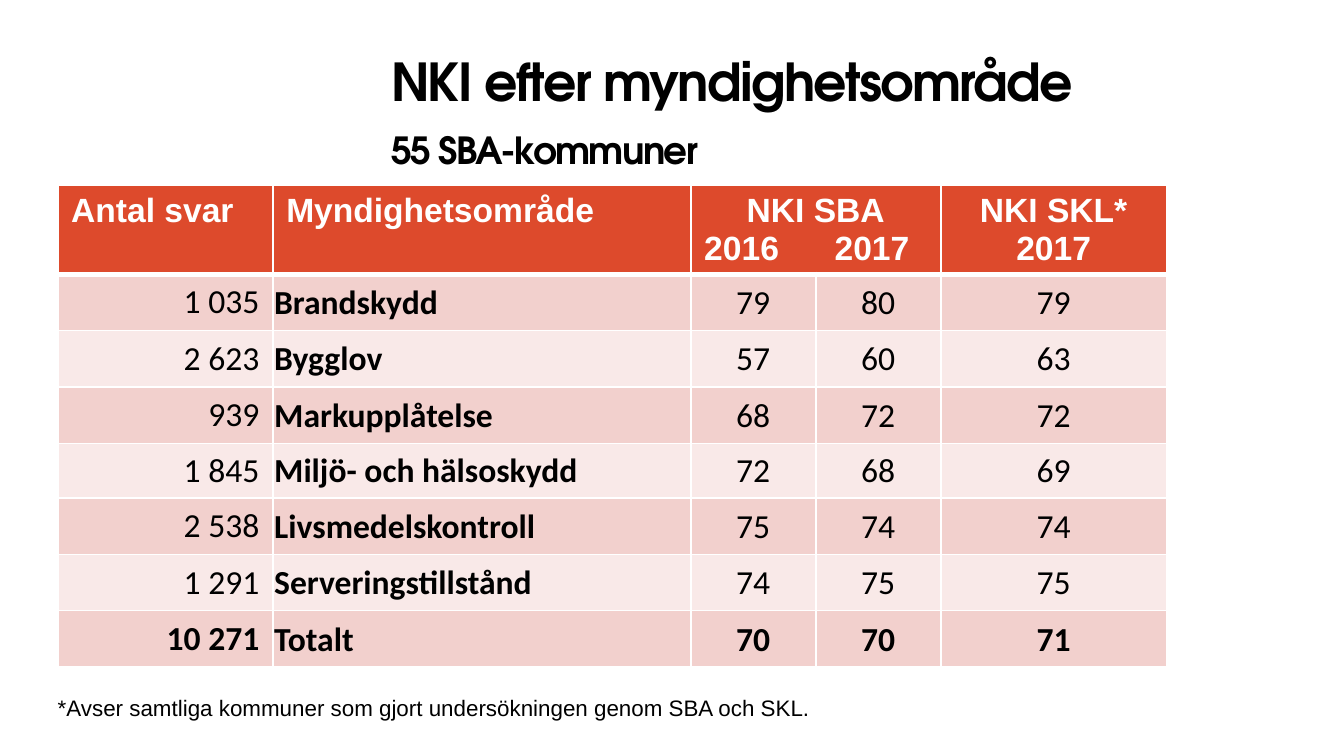
from lxml import etree
from pptx import Presentation
from pptx.dml.color import RGBColor
from pptx.enum.text import MSO_ANCHOR, MSO_AUTO_SIZE, PP_ALIGN
from pptx.oxml.ns import qn
from pptx.util import Inches, Pt

LEFT, CENTER, RIGHT = PP_ALIGN.LEFT, PP_ALIGN.CENTER, PP_ALIGN.RIGHT
TOP, MIDDLE = MSO_ANCHOR.TOP, MSO_ANCHOR.MIDDLE
BLACK, WHITE = "000000", "FFFFFF"
HEADER_FILL, BAND_FILLS = "DD4A2C", ("F2D0CD", "F9E9E8")

# Content
TITLE = "NKI efter myndighetsområde"
SUBTITLE = "55 SBA-kommuner"
FOOTNOTE = "*Avser samtliga kommuner som gjort undersökningen genom SBA och SKL."
# Each heading: column, paragraphs with their alignment
HEADINGS = [
    (0, [("Antal svar", LEFT)]),
    (1, [("Myndighetsområde", LEFT)]),
    (2, [("NKI SBA", CENTER), ("2016\t2017", LEFT)]),
    (4, [("NKI SKL* 2017", CENTER)]),
]
ROWS = [
    ("1 035", "Brandskydd", "79", "80", "79"),
    ("2 623", "Bygglov", "57", "60", "63"),
    ("939", "Markupplåtelse", "68", "72", "72"),
    ("1 845", "Miljö- och hälsoskydd", "72", "68", "69"),
    ("2 538", "Livsmedelskontroll", "75", "74", "74"),
    ("1 291", "Serveringstillstånd", "74", "75", "75"),
    ("10 271", "Totalt", "70", "70", "71"),
]
SLIDE_WIDTH = 10
COLUMN_WIDTHS = [1.6, 3.11, 0.93, 0.93, 1.68]
ROW_HEIGHTS = [0.64, 0.42, 0.42, 0.42, 0.38, 0.42, 0.42, 0.42]
TABLE_HEIGHT = 3.65
COLUMN_ALIGNMENTS = [RIGHT, LEFT, CENTER, CENTER, CENTER]
NAME_COLUMN = 1
YEAR_TAB = 0.97


def color(value):
    return RGBColor.from_string(value)


def write(paragraph, text, size=18, font="Arial", fill=BLACK, bold=False,
          align=LEFT, line_spacing=None, tracking=None):
    paragraph.alignment = align
    if line_spacing:
        paragraph.line_spacing = Pt(line_spacing)
    run = paragraph.add_run()
    run.text = text
    run.font.size = Pt(size)
    run.font.name = font
    run.font.bold = bold
    run.font.color.rgb = color(fill)
    if tracking:
        run.font._element.set("spc", str(round(tracking * 100)))


def clear_margins(frame):
    frame.margin_left = frame.margin_top = 0
    frame.margin_right = frame.margin_bottom = 0


def add_tab_stop(paragraph, position):
    properties = paragraph._p.get_or_add_pPr()
    tabs = etree.SubElement(properties, qn("a:tabLst"))
    etree.SubElement(tabs, qn("a:tab"), pos=str(Inches(position)), algn="l")


def style_cell(cell, fill, top=1, bottom=1):
    cell.fill.solid()
    cell.fill.fore_color.rgb = color(fill)
    properties = cell._tc.get_or_add_tcPr()
    widths = {"L": 1, "R": 1, "T": top, "B": bottom}
    for index, (side, width) in enumerate(widths.items()):
        line = etree.Element(qn(f"a:ln{side}"), w=str(Pt(width)))
        solid = etree.SubElement(line, qn("a:solidFill"))
        etree.SubElement(solid, qn("a:srgbClr"), val=WHITE)
        properties.insert(index, line)


# Widescreen slide, 16:9
presentation = Presentation()
presentation.slide_width = Inches(SLIDE_WIDTH)
presentation.slide_height = Inches(SLIDE_WIDTH * 9 / 16)
slide = presentation.slides.add_slide(presentation.slide_layouts[5])

# Title
title = slide.shapes.title
title.left, title.top = Inches(2.91), Inches(0.39)
title.width, title.height = Inches(6.21), Inches(0.8)
frame = title.text_frame
clear_margins(frame)
frame.word_wrap = True
frame.auto_size = MSO_AUTO_SIZE.NONE
frame.vertical_anchor = TOP
title_format = dict(font="TeX Gyre Adventor", bold=True, line_spacing=32.1,
                    tracking=-0.9)
write(frame.paragraphs[0], TITLE, size=28, **title_format)
frame.paragraphs[0].add_line_break()
write(frame.paragraphs[0], SUBTITLE, size=20, **title_format)

# Table grid
table_frame = slide.shapes.add_table(
    len(ROW_HEIGHTS), len(COLUMN_WIDTHS), Inches(0.43), Inches(1.38),
    Inches(sum(COLUMN_WIDTHS)), Inches(TABLE_HEIGHT))
table = table_frame.table
for column, width in zip(table.columns, COLUMN_WIDTHS):
    column.width = Inches(width)
for row, height in zip(table.rows, ROW_HEIGHTS):
    row.height = Inches(height)
table_frame.height = Inches(TABLE_HEIGHT)

# Header row
for cell in table.rows[0].cells:
    style_cell(cell, HEADER_FILL, bottom=3)
table.cell(0, 2).merge(table.cell(0, 3))
for column_index, lines in HEADINGS:
    frame = table.cell(0, column_index).text_frame
    for index, (text, align) in enumerate(lines):
        paragraph = frame.add_paragraph() if index else frame.paragraphs[0]
        if "\t" in text:
            add_tab_stop(paragraph, YEAR_TAB)
        write(paragraph, text, fill=WHITE, bold=True, align=align)

# Body rows, with the total in bold
for row_index, values in enumerate(ROWS, start=1):
    is_total = row_index == len(ROWS)
    for column_index, text in enumerate(values):
        cell = table.cell(row_index, column_index)
        style_cell(cell, BAND_FILLS[(row_index - 1) % 2],
                   top=3 if row_index == 1 else 1)
        cell.vertical_anchor = MIDDLE
        if column_index >= NAME_COLUMN:
            cell.margin_left = cell.margin_right = cell.margin_top = Inches(0.01)
            cell.margin_bottom = 0
        write(cell.text_frame.paragraphs[0], text, font="Calibri",
              bold=is_total or column_index == NAME_COLUMN,
              align=COLUMN_ALIGNMENTS[column_index])

# Footnote
footnote = slide.shapes.add_textbox(Inches(0.43), Inches(5.03),
                                    Inches(7.64), Inches(0.38))
clear_margins(footnote.text_frame)
footnote.text_frame.word_wrap = False
write(footnote.text_frame.paragraphs[0], FOOTNOTE, size=12, line_spacing=24)

presentation.save("out.pptx")
